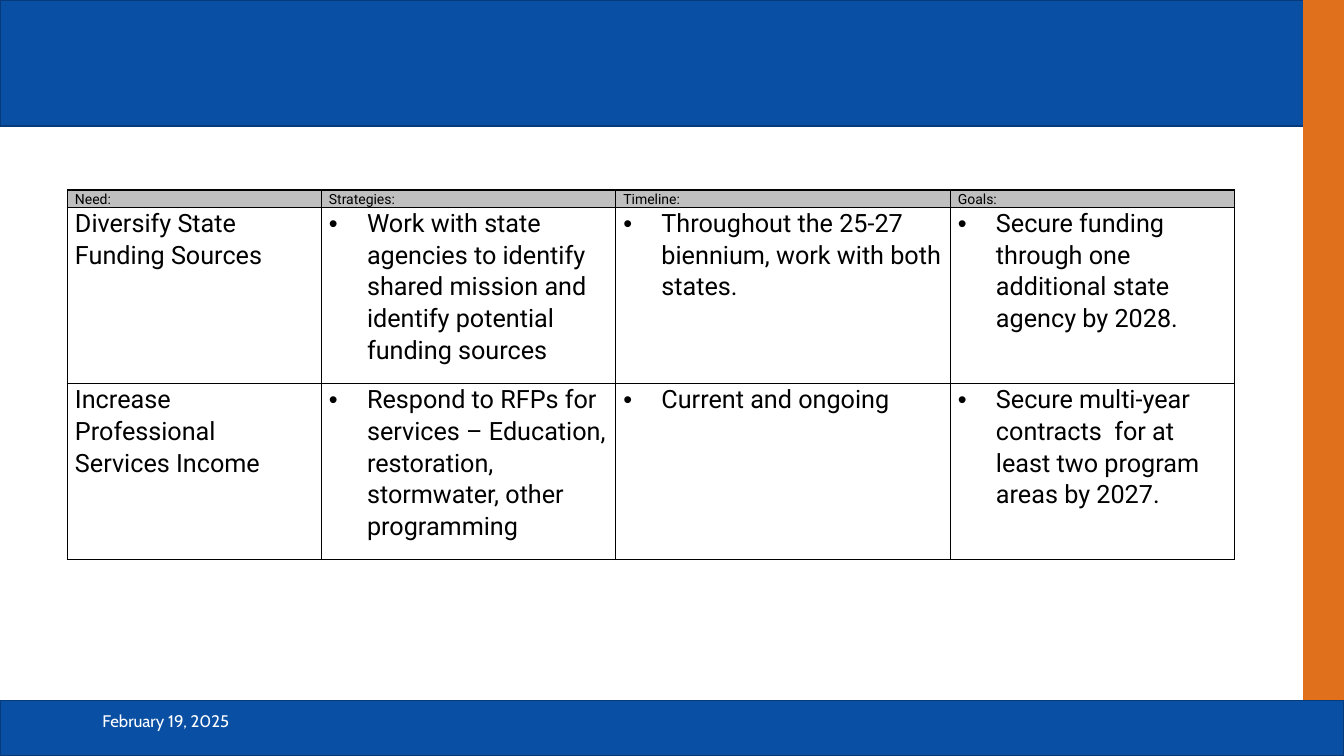
import pptx
import pptx.dml.color
import pptx.enum.shapes
import pptx.enum.text
import pptx.oxml
import pptx.util
from lxml import etree
from pptx.oxml.ns import qn

Cm = pptx.util.Cm
Pt = pptx.util.Pt

COLORS = {
    "blue": "094FA4",
    "blue_edge": "073A79",
    "orange": "E0701C",
    "gray": "BFBFBF",
    "black": "000000",
    "white": "FFFFFF",
}
SLIDE_WIDTH, SLIDE_HEIGHT = 33.87, 19.05
TABLE_LEFT = 1.7
COLUMN_WIDTHS = [6.4, 7.42, 8.43, 7.16]


def rgb(name):
    return pptx.dml.color.RGBColor.from_string(COLORS[name])


class SlideBuilder:
    """Holds the text style and the slide being filled."""

    body_font = "Roboto"
    footer_font = "Cabin"
    line_spacing = 1.07
    bullet_indent = 0.96
    cell_margin = 0.19

    def __init__(self, slide):
        self.slide = slide

    def bar(self, left, top, width, height, fill, edge=None):
        shape = self.slide.shapes.add_shape(
            pptx.enum.shapes.MSO_SHAPE.RECTANGLE,
            Cm(left), Cm(top), Cm(width), Cm(height))
        shape.shadow.inherit = False
        shape.fill.solid()
        shape.fill.fore_color.rgb = rgb(fill)
        if edge:
            shape.line.color.rgb = rgb(edge)
            shape.line.width = Pt(1)
        else:
            shape.line.fill.background()

    def run(self, paragraph, text, font, size, color):
        run = paragraph.add_run()
        run.text = text
        run.font.name = font
        run.font.size = Pt(size)
        run.font.color.rgb = rgb(color)

    def label(self, left, top, width, height, text):
        shape = self.slide.shapes.add_textbox(Cm(left), Cm(top), Cm(width), Cm(height))
        frame = shape.text_frame
        frame.word_wrap = True
        frame.vertical_anchor = pptx.enum.text.MSO_ANCHOR.MIDDLE
        self.run(frame.paragraphs[0], text, self.footer_font, 12, "white")

    def bullet(self, paragraph):
        properties = paragraph._p.get_or_add_pPr()
        indent = Cm(self.bullet_indent)
        properties.set("marL", str(indent))
        properties.set("indent", str(-indent))
        color = etree.SubElement(properties, qn("a:buClr"))
        etree.SubElement(color, qn("a:srgbClr"), val=COLORS["black"])
        etree.SubElement(properties, qn("a:buFont"), typeface="Arial")
        etree.SubElement(properties, qn("a:buChar"), char="•")

    def borders(self, cell):
        properties = cell._tc.get_or_add_tcPr()
        for side in ("lnL", "lnR", "lnT", "lnB"):
            line = etree.SubElement(properties, qn(f"a:{side}"), w=str(Pt(1)))
            fill = etree.SubElement(line, qn("a:solidFill"))
            etree.SubElement(fill, qn("a:srgbClr"), val=COLORS["black"])

    def cell(self, cell, text, size, fill, bulleted):
        cell.margin_left = cell.margin_right = Cm(self.cell_margin)
        cell.margin_top = cell.margin_bottom = 0
        self.borders(cell)
        if fill:
            cell.fill.solid()
            cell.fill.fore_color.rgb = rgb(fill)
        else:
            cell.fill.background()
        paragraph = cell.text_frame.paragraphs[0]
        if bulleted:
            self.bullet(paragraph)
        paragraph.line_spacing = self.line_spacing
        self.run(paragraph, text, self.body_font, size, "black")

    def table(self, top, row_height, rows, size, fill=None, bulleted=False):
        table = self.slide.shapes.add_table(
            len(rows), len(COLUMN_WIDTHS), Cm(TABLE_LEFT), Cm(top),
            Cm(sum(COLUMN_WIDTHS)), Cm(row_height * len(rows))).table
        table.first_row = table.horz_banding = False
        for column, width in zip(table.columns, COLUMN_WIDTHS):
            column.width = Cm(width)
        for row_index, texts in enumerate(rows):
            table.rows[row_index].height = Cm(row_height)
            for column_index, text in enumerate(texts):
                self.cell(table.cell(row_index, column_index), text, size, fill,
                          bulleted and column_index > 0)


def main():
    presentation = pptx.Presentation()
    presentation.slide_width = Cm(SLIDE_WIDTH)
    presentation.slide_height = Cm(SLIDE_HEIGHT)
    builder = SlideBuilder(presentation.slides.add_slide(presentation.slide_layouts[6]))

    # Frame: header, side stripe, footer
    footer_top = 17.65
    stripe_left = 32.84
    builder.bar(0, 0, SLIDE_WIDTH, 3.18, "blue", "blue_edge")
    builder.bar(stripe_left, 0, SLIDE_WIDTH - stripe_left, 18.7, "orange")
    builder.bar(0, footer_top, SLIDE_WIDTH, SLIDE_HEIGHT - footer_top, "blue", "blue_edge")

    # Column headings
    builder.table(4.79, 0.43, [["Need:", "Strategies:", "Timeline:", "Goals:"]],
                  size=10, fill="gray")

    # Date
    builder.label(2.33, footer_top, 7.62, 1.01, "February 19, 2025")

    # Funding needs
    needs = [
        ["Diversify State Funding Sources",
         "Work with state agencies to identify shared mission and identify "
         "potential funding sources",
         "Throughout the 25-27 biennium, work with both states.",
         "Secure funding through one additional state agency by 2028."],
        ["Increase Professional Services Income",
         "Respond to RFPs for services – Education, restoration, stormwater, "
         "other programming",
         "Current and ongoing",
         "Secure multi-year contracts  for at least two program areas by 2027."],
    ]
    builder.table(5.22, 4.44, needs, size=18, bulleted=True)

    presentation.save("out.pptx")


if __name__ == "__main__":
    main()
